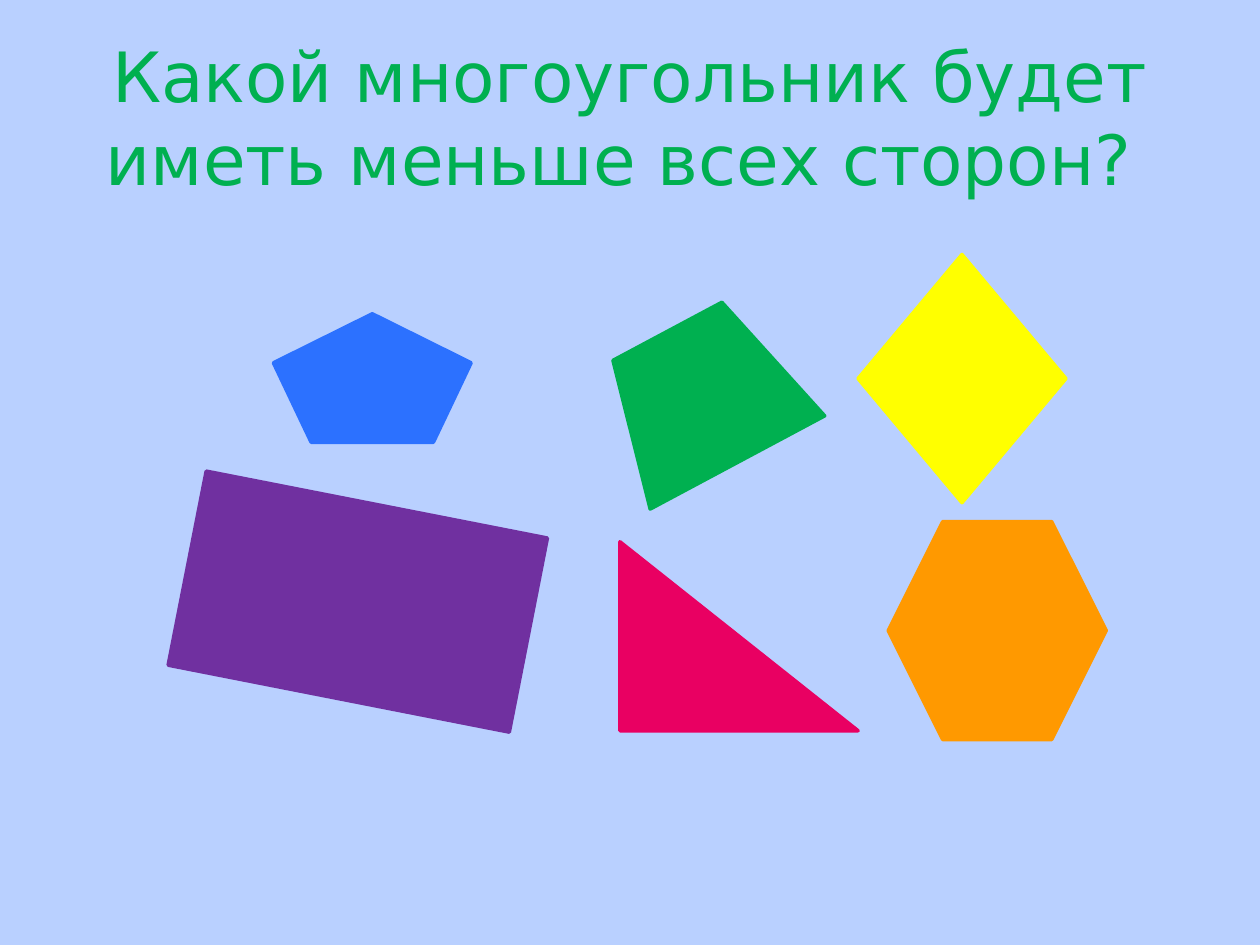
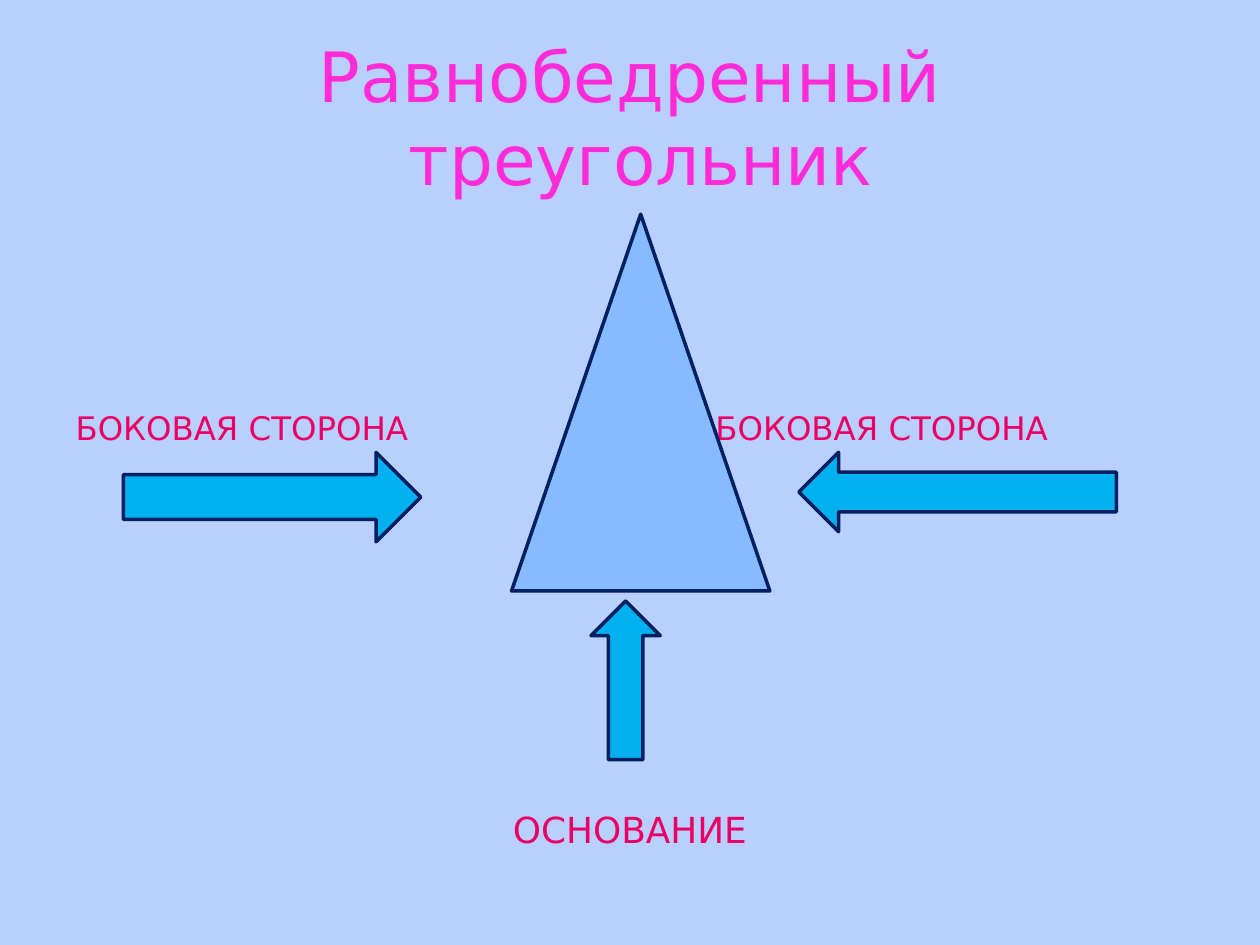
from lxml import etree
from pptx import Presentation
from pptx.dml.color import RGBColor
from pptx.enum import shapes, text
from pptx.oxml.ns import qn
from pptx.util import Inches, Pt

FONT = "DejaVu Sans"
BACKGROUND, NAVY, SKY, PALE_BLUE = "B9D0FF", "002060", "00B0F0", "87BBFF"
BLUE, YELLOW, PURPLE = "2C71FF", "FFFF00", "7030A0"
GREEN, ORANGE, CRIMSON, PINK = "00B050", "FF9900", "E90062", "FF2BD8"
TITLE_ONLY, TITLE_AND_BODY = 5, 1
SIDE_SIZE, BASE_SIZE = 18.5, 20.5
G = shapes.MSO_SHAPE


def rgb(value):
    return RGBColor.from_string(value)


class Deck:
    def __init__(self):
        self.prs = Presentation()
        self.prs.slide_width, self.prs.slide_height = Inches(10), Inches(7.5)
        fill = self.prs.slide_master.background.fill
        fill.solid()
        fill.fore_color.rgb = rgb(BACKGROUND)
        self.s = None

    def slide(self, layout, title, color):
        self.s = self.prs.slides.add_slide(self.prs.slide_layouts[layout])
        sp = self.s.shapes.title
        self.place(sp, 0.5, 0.3, 9, 1.25)
        tf = sp.text_frame
        tf.auto_size = text.MSO_AUTO_SIZE.NONE
        tf.vertical_anchor = text.MSO_ANCHOR.MIDDLE
        tf.text = title
        self.style(tf.paragraphs[0], 39.6, color, alignment=text.PP_ALIGN.CENTER)

    def place(self, sp, *box):
        for name, value in zip(("left", "top", "width", "height"), box):
            setattr(sp, name, Inches(value))

    def style(self, p, size, color, **paragraph_format):
        for name, value in paragraph_format.items():
            setattr(p, name, value)
        for r in p.runs:
            for name, value in {"name": FONT, "size": Pt(size)}.items():
                setattr(r.font, name, value)
            r.font.color.rgb = rgb(color)

    def body(self, box, lines):
        sp = self.s.placeholders[1]
        self.place(sp, *box)
        tf = sp.text_frame
        tf.auto_size = text.MSO_AUTO_SIZE.NONE
        for i, (words, size, color, align, before) in enumerate(lines):
            p = tf.add_paragraph() if i else tf.paragraphs[0]
            p.text = words
            pPr = p._p.get_or_add_pPr()
            pPr.set("marL", "0")
            pPr.set("indent", "0")
            etree.SubElement(pPr, qn("a:buNone"))
            self.style(p, size, color, alignment=align, space_before=Pt(before))

    def label(self, box, words, size, color):
        tf = self.s.shapes.add_textbox(*map(Inches, box)).text_frame
        tf.word_wrap = True
        tf.text = words
        self.style(tf.paragraphs[0], size, color)

    def shape(self, kind, box, fill, line=None, rotation=0):
        sp = self.s.shapes.add_shape(kind, *map(Inches, box))
        sp.shadow.inherit = False
        sp.rotation = rotation
        sp.fill.solid()
        sp.fill.fore_color.rgb = rgb(fill)
        sp.line.color.rgb = rgb(line or fill)
        sp.line.width = Pt(2)


def polygons(deck):
    deck.slide(TITLE_ONLY, "Какой многоугольник будет иметь меньше всех сторон? ", GREEN)
    for kind, box, color, rotation in (
        (G.REGULAR_PENTAGON, (2.17, 2.49, 1.57, 1.02), BLUE, 0),
        (G.DIAMOND, (6.81, 2.02, 1.65, 1.97), YELLOW, 0),
        (G.RECTANGLE, (1.46, 3.99, 2.76, 1.57), PURPLE, 11.1),
        (G.TRAPEZOID, (4.79, 2.56, 1.57, 1.18), GREEN, 331.9),
        (G.HEXAGON, (7.05, 4.14, 1.73, 1.73), ORANGE, 0),
        (G.RIGHT_TRIANGLE, (4.92, 4.3, 1.89, 1.5), CRIMSON, 0),
    ):
        deck.shape(kind, box, color, rotation=rotation)


def isosceles_triangle(deck):
    deck.slide(TITLE_AND_BODY, "Равнобедренный\v треугольник", PINK)
    side, top = "БОКОВАЯ СТОРОНА", 3.19
    deck.body((0.5, top, 9, 3.6), (
        (side, SIDE_SIZE, CRIMSON, text.PP_ALIGN.LEFT, 0),
        ("ОСНОВАНИЕ", BASE_SIZE, CRIMSON, text.PP_ALIGN.CENTER, 206),
    ))
    deck.label((5.58, top, 3.2, 0.4), side, SIDE_SIZE, CRIMSON)
    deck.shape(G.ISOSCELES_TRIANGLE, (4.06, 1.7, 2.05, 2.99), PALE_BLUE, NAVY)
    for kind, box in (
        (G.RIGHT_ARROW, (0.98, 3.59, 2.36, 0.71)),
        (G.LEFT_ARROW, (6.34, 3.59, 2.52, 0.63)),
        (G.UP_ARROW, (4.69, 4.77, 0.55, 1.26)),
    ):
        deck.shape(kind, box, SKY, NAVY)


def main():
    deck = Deck()
    polygons(deck)
    isosceles_triangle(deck)
    deck.prs.save("out.pptx")


if __name__ == "__main__":
    main()
